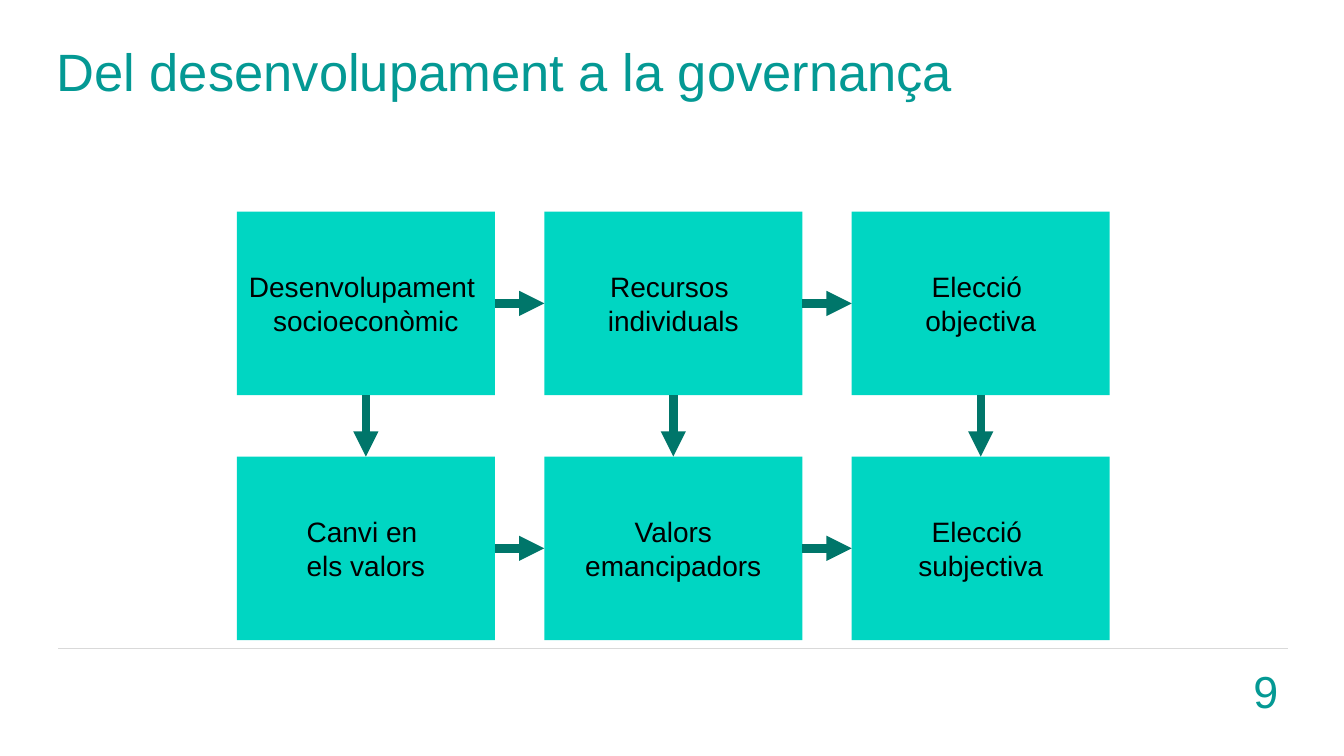
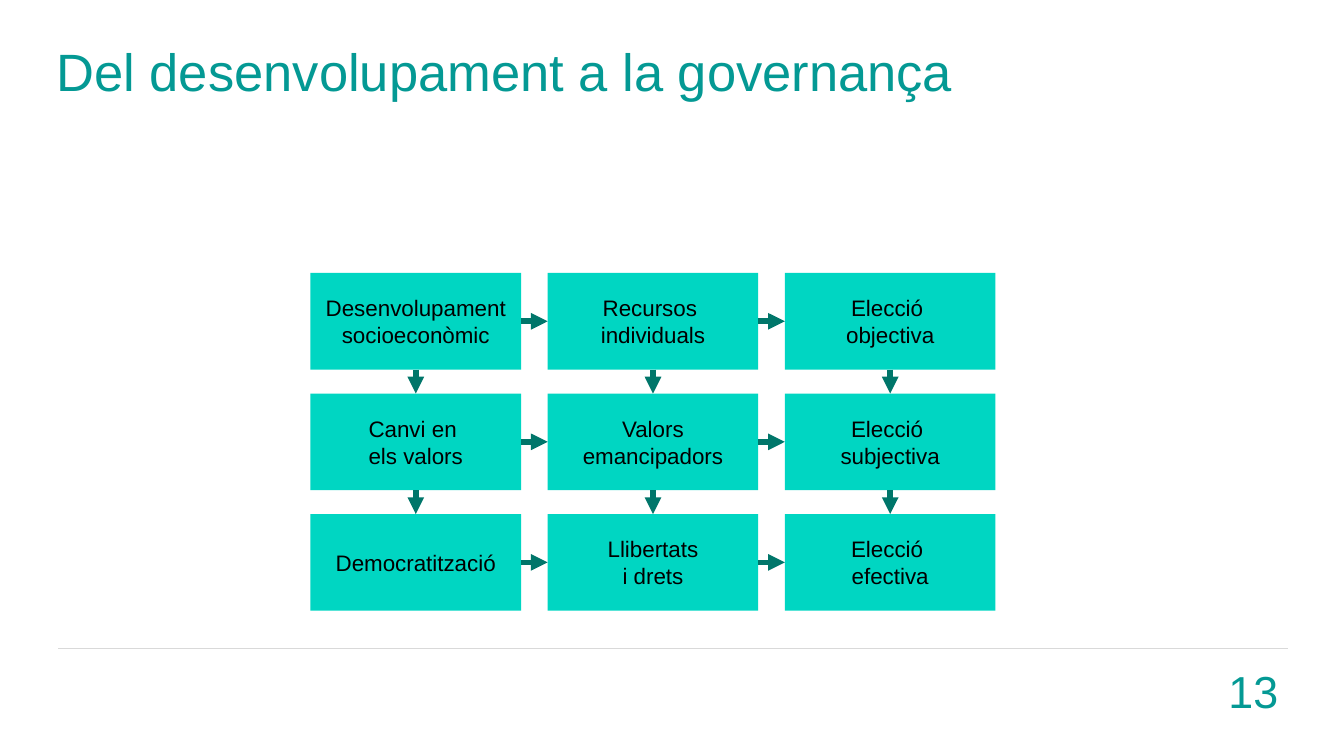
"""Builds two box-and-arrow slides on the path from development to governance."""
from lxml import etree
from pptx import Presentation
from pptx import util as u
from pptx.dml.color import RGBColor
from pptx.enum import shapes, text
from pptx.oxml import ns

TEAL = RGBColor(0x04, 0x99, 0x94)
TURQUOISE = RGBColor(0x00, 0xD6, 0xC2)
DARK_TEAL = RGBColor(0x00, 0x76, 0x6A)
LIGHT_GREY = RGBColor(0xD9, 0xD9, 0xD9)
BLACK = RGBColor(0x00, 0x00, 0x00)

FONT = "Arial"
COLUMNS, ROWS = 160, 90
TOP, LEFT, BOTTOM, RIGHT = range(4)

TITLE = "Del desenvolupament a la governança"
RESOURCES = ["Recursos \nindividuals", "Elecció \nobjectiva"]
VALUES = ["Canvi en \nels valors", "Valors\nemancipadors", "Elecció \nsubjectiva"]
RIGHTS = ["Democratització", "Llibertats\ni drets", "Elecció \nefectiva"]


def write_text(frame, words, *, size, colour=BLACK,
               align=text.PP_ALIGN.CENTER, spacing=1.0):
    """Fill a text frame with words in one format."""
    frame.text = words
    frame.word_wrap = True
    frame.auto_size = text.MSO_AUTO_SIZE.NONE
    frame.vertical_anchor = text.MSO_ANCHOR.MIDDLE
    for para in frame.paragraphs:
        para.alignment = align
        para.line_spacing = spacing
        para.font.name = FONT
        para.font.size = u.Pt(size)
        para.font.color.rgb = colour


class Deck:
    """Holds the shared style and the current page."""

    def __init__(self):
        self.file = Presentation()
        self.file.slide_width = u.Inches(13.333)
        self.file.slide_height = u.Inches(7.5)
        self.page = None

    def place(self, column, row):
        """Turn a grid position into slide lengths."""
        return (round(self.file.slide_width * column / COLUMNS),
                round(self.file.slide_height * row / ROWS))

    def add_page(self, title, number):
        """Start a page with its title, footer rule and number."""
        self.page = self.file.slides.add_slide(self.file.slide_layouts[5])
        self.add_line(self.place(6.96, 77.16), self.place(153.36, 77.16),
                      LIGHT_GREY, 0.5)
        heading = self.page.shapes.title
        heading.left, heading.top = self.place(5.52, 5.28)
        heading.width, heading.height = self.place(125.64, 7.08)
        write_text(heading.text_frame, title, size=37.5, colour=TEAL,
                   align=text.PP_ALIGN.LEFT, spacing=0.9)
        footer = self.page.shapes.add_textbox(*self.place(111.6, 79.8),
                                              *self.place(41.76, 4.8))
        write_text(footer.text_frame, str(number), size=32, colour=TEAL,
                   align=text.PP_ALIGN.RIGHT)

    def add_line(self, start, end, colour, weight):
        """Draw a straight line without a shadow."""
        line = self.page.shapes.add_connector(
            shapes.MSO_CONNECTOR.STRAIGHT, *start, *end)
        line.line.color.rgb = colour
        line.line.width = u.Pt(weight)
        etree.SubElement(line.element.spPr, ns.qn("a:effectLst"))
        return line

    def add_box(self, words, column, row, width, height, size):
        """Draw a filled box with centred words."""
        box = self.page.shapes.add_shape(
            shapes.MSO_SHAPE.RECTANGLE, *self.place(column, row),
            *self.place(width, height))
        box.shadow.inherit = False
        box.fill.solid()
        box.fill.fore_color.rgb = TURQUOISE
        box.line.fill.background()
        write_text(box.text_frame, words, size=size)
        return box

    def add_arrow(self, source, source_side, target, target_side, weight):
        """Join two boxes with an arrow that points at the target."""
        arrow = self.add_line((0, 0), (0, 0), DARK_TEAL, weight)
        arrow.begin_connect(source, source_side)
        arrow.end_connect(target, target_side)
        outline = arrow.element.spPr.find(ns.qn("a:ln"))
        etree.SubElement(outline, ns.qn("a:tailEnd"), type="triangle")

    def add_flow(self, labels, *, origin, box_size, pitch, size, weight):
        """Lay out a grid of boxes, each pointing right and down."""
        boxes = [[self.add_box(words, origin[0] + i * pitch[0],
                               origin[1] + j * pitch[1], *box_size, size)
                  for i, words in enumerate(line)]
                 for j, line in enumerate(labels)]
        for line in boxes:
            for source, target in zip(line, line[1:]):
                self.add_arrow(source, RIGHT, target, LEFT, weight)
        for upper, lower in zip(boxes, boxes[1:]):
            for source, target in zip(upper, lower):
                self.add_arrow(source, BOTTOM, target, TOP, weight)


def main():
    """Build both pages and save the deck."""
    deck = Deck()
    deck.add_page(TITLE, 9)
    deck.add_flow([["Desenvolupament \vsocioeconòmic", *RESOURCES], VALUES],
                  origin=(28.2, 25.2), box_size=(30.72, 21.84),
                  pitch=(36.6, 29.16), size=20, weight=6)
    deck.add_page(TITLE, 13)
    deck.add_flow([["Desenvolupament socioeconòmic", *RESOURCES], VALUES, RIGHTS],
                  origin=(36.96, 32.5), box_size=(25.08, 11.5),
                  pitch=(28.24, 14.35), size=16, weight=4)
    deck.file.save("out.pptx")


if __name__ == "__main__":
    main()
